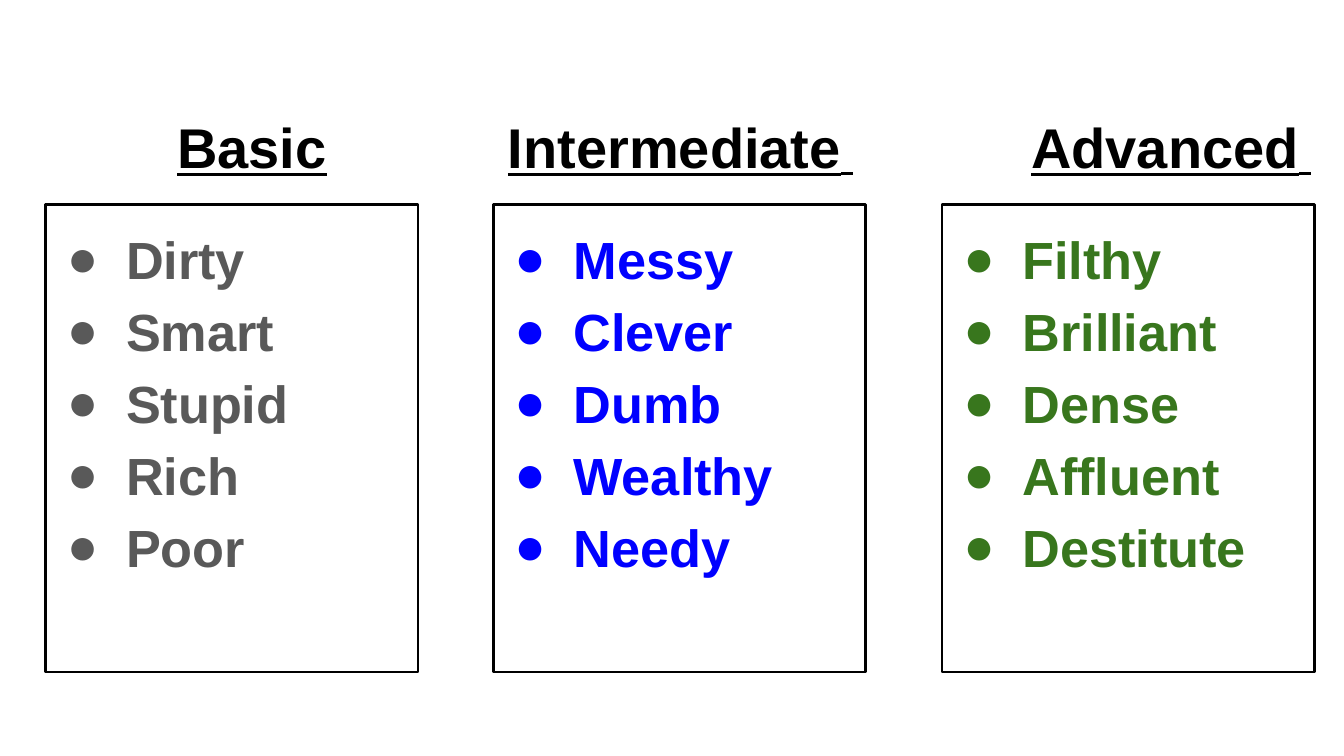
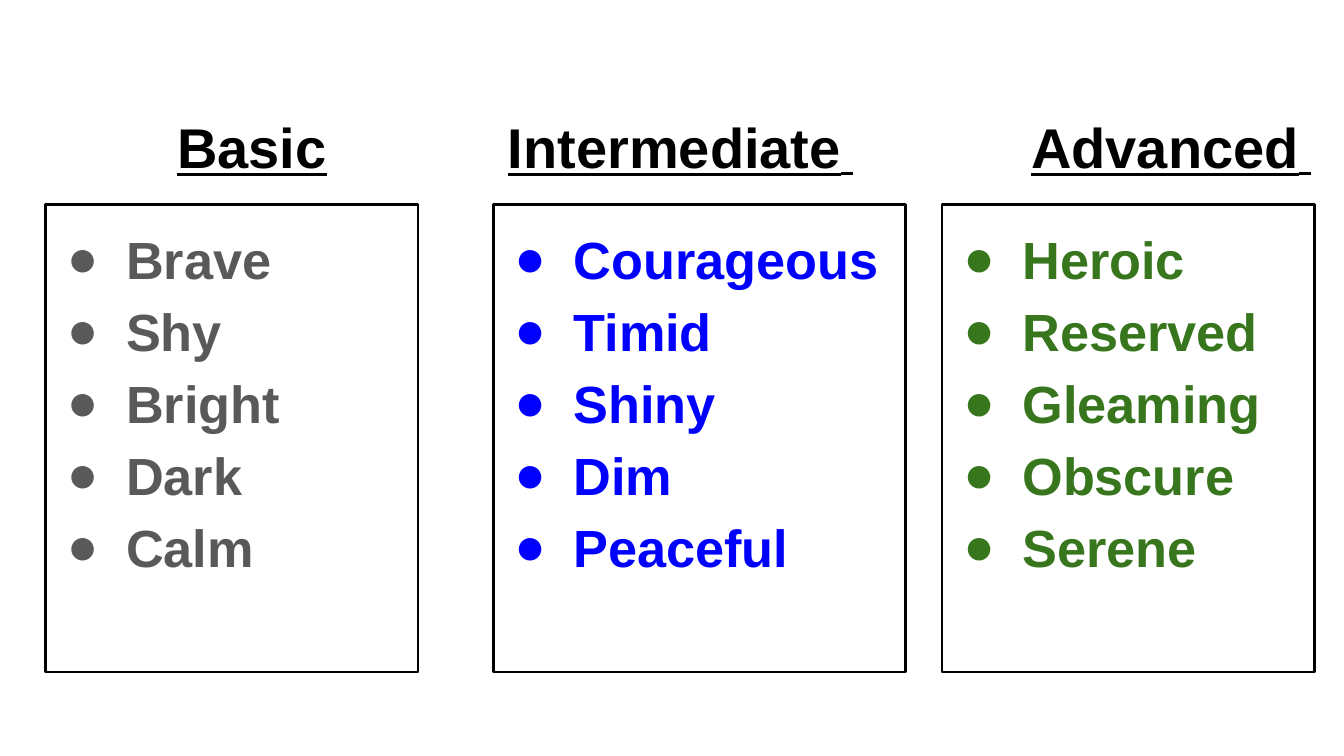
from dataclasses import dataclass

from lxml import etree
from pptx import Presentation
from pptx.dml.color import RGBColor
from pptx.enum.shapes import MSO_SHAPE
from pptx.enum.text import MSO_ANCHOR, MSO_AUTO_SIZE, PP_ALIGN
from pptx.oxml.ns import qn
from pptx.util import Inches, Pt

RECT = MSO_SHAPE.RECTANGLE
TOP, BOTTOM = MSO_ANCHOR.TOP, MSO_ANCHOR.BOTTOM
LEFT, CENTER = PP_ALIGN.LEFT, PP_ALIGN.CENTER
NO_FIT = MSO_AUTO_SIZE.NONE

# Content: one word list per level, and the box widths, for each slide
SLIDES = [
    {
        "words": [
            ["Dirty", "Smart", "Stupid", "Rich", "Poor"],
            ["Messy", "Clever", "Dumb", "Wealthy", "Needy"],
            ["Filthy", "Brilliant", "Dense", "Affluent", "Destitute"],
        ],
        "widths": [2.77, 2.77, 2.77],
    },
    {
        "words": [
            ["Brave", "Shy", "Bright", "Dark", "Calm"],
            ["Courageous", "Timid", "Shiny", "Dim", "Peaceful"],
            ["Heroic", "Reserved", "Gleaming", "Obscure", "Serene"],
        ],
        "widths": [2.77, 3.07, 2.77],
    },
]

# Levels: heading runs as (text, size role), heading left, box left, word colour
LEVELS = [
    ([("Basic", "heading")], 0.34, 0.34, "595959"),
    ([("Intermediate", "heading"), (" ", "heading_end")], 3.53, 3.67, "0000FF"),
    ([("Advanced", "heading"), (" ", "heading_end")], 7.18, 7.01, "38761D"),
]


@dataclass(frozen=True)
class Theme:
    font: str = "Arial"
    ink: str = "000000"
    paper: str = "FFFFFF"
    heading: int = 30
    heading_end: int = 24
    word: int = 28
    line: float = 1.5


THEME = Theme()
SLIDE_W = Inches(10)
SLIDE_H = SLIDE_W * 9 // 16
HEADING_TOP, HEADING_W, HEADING_H = 0.61, 3.07, 0.83
BOX_TOP, BOX_H = 1.52, 3.48
INSET, INDENT, HANGING = 0.1, 0.5, -0.44


def rgb(color):
    return RGBColor.from_string(color)


def set_frame(tf, anchor):
    tf.word_wrap = True
    tf.auto_size = NO_FIT
    tf.vertical_anchor = anchor
    tf.margin_left = tf.margin_right = Inches(INSET)
    tf.margin_top = tf.margin_bottom = Inches(INSET)


def add_run(p, text, size, color, underline=False):
    r = p.add_run()
    r.text = text
    r.font.name = THEME.font
    r.font.size = Pt(size)
    r.font.bold = True
    r.font.underline = underline
    r.font.color.rgb = rgb(color)


def set_bullet(p, color):
    pPr = p._p.get_or_add_pPr()
    pPr.set("marL", str(Inches(INDENT)))
    pPr.set("indent", str(Inches(HANGING)))
    bu_clr = etree.SubElement(pPr, qn("a:buClr"))
    etree.SubElement(bu_clr, qn("a:srgbClr"), val=color)
    etree.SubElement(pPr, qn("a:buFont"), typeface=THEME.font)
    etree.SubElement(pPr, qn("a:buChar"), char="●")


def add_heading(s, runs, left, first):
    place = [Inches(v) for v in (left, HEADING_TOP, HEADING_W, HEADING_H)]
    if first:
        sp = s.shapes.title
        sp.left, sp.top, sp.width, sp.height = place
    else:
        sp = s.shapes.add_textbox(*place)
    set_frame(sp.text_frame, BOTTOM)
    p = sp.text_frame.paragraphs[0]
    p.alignment = CENTER
    for text, role in runs:
        add_run(p, text, getattr(THEME, role), THEME.ink, underline=True)


def add_word_box(s, words, left, width, color):
    sp = s.shapes.add_shape(
        RECT, Inches(left), Inches(BOX_TOP), Inches(width), Inches(BOX_H)
    )
    sp.shadow.inherit = False
    sp.fill.background()
    sp.line.color.rgb = rgb(THEME.ink)
    sp.line.width = Pt(THEME.line)
    tf = sp.text_frame
    set_frame(tf, TOP)
    for i, word in enumerate(words):
        p = tf.add_paragraph() if i else tf.paragraphs[0]
        p.alignment = LEFT
        p.line_spacing = 1.15
        set_bullet(p, color)
        add_run(p, word, THEME.word, color)


def main():
    prs = Presentation()
    prs.slide_width, prs.slide_height = SLIDE_W, SLIDE_H
    title_only = prs.slide_layouts[5]

    # Shared background
    fill = prs.slide_master.background.fill
    fill.solid()
    fill.fore_color.rgb = rgb(THEME.paper)

    # One heading and one word box per level
    for content in SLIDES:
        s = prs.slides.add_slide(title_only)
        columns = zip(LEVELS, content["words"], content["widths"])
        for i, (level, words, width) in enumerate(columns):
            runs, heading_left, box_left, color = level
            add_heading(s, runs, heading_left, first=i == 0)
            add_word_box(s, words, box_left, width, color)

    prs.save("out.pptx")


if __name__ == "__main__":
    main()
